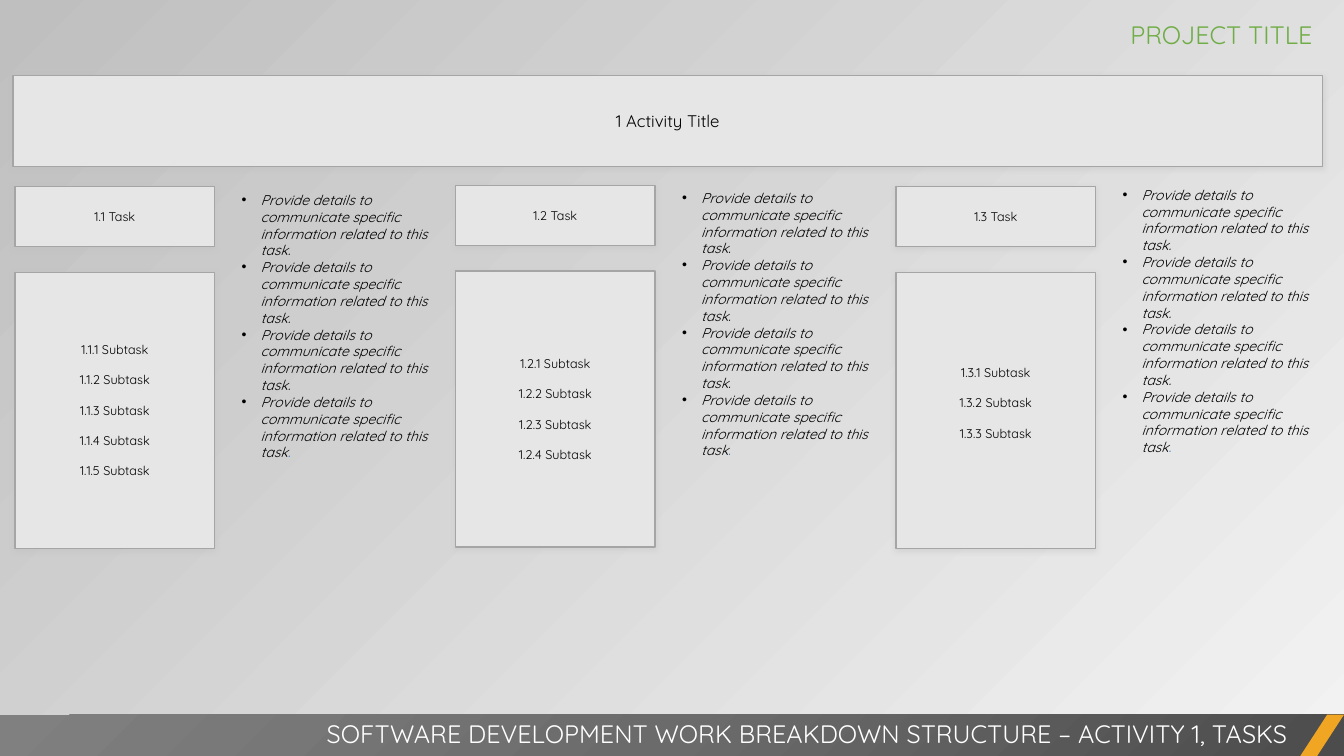
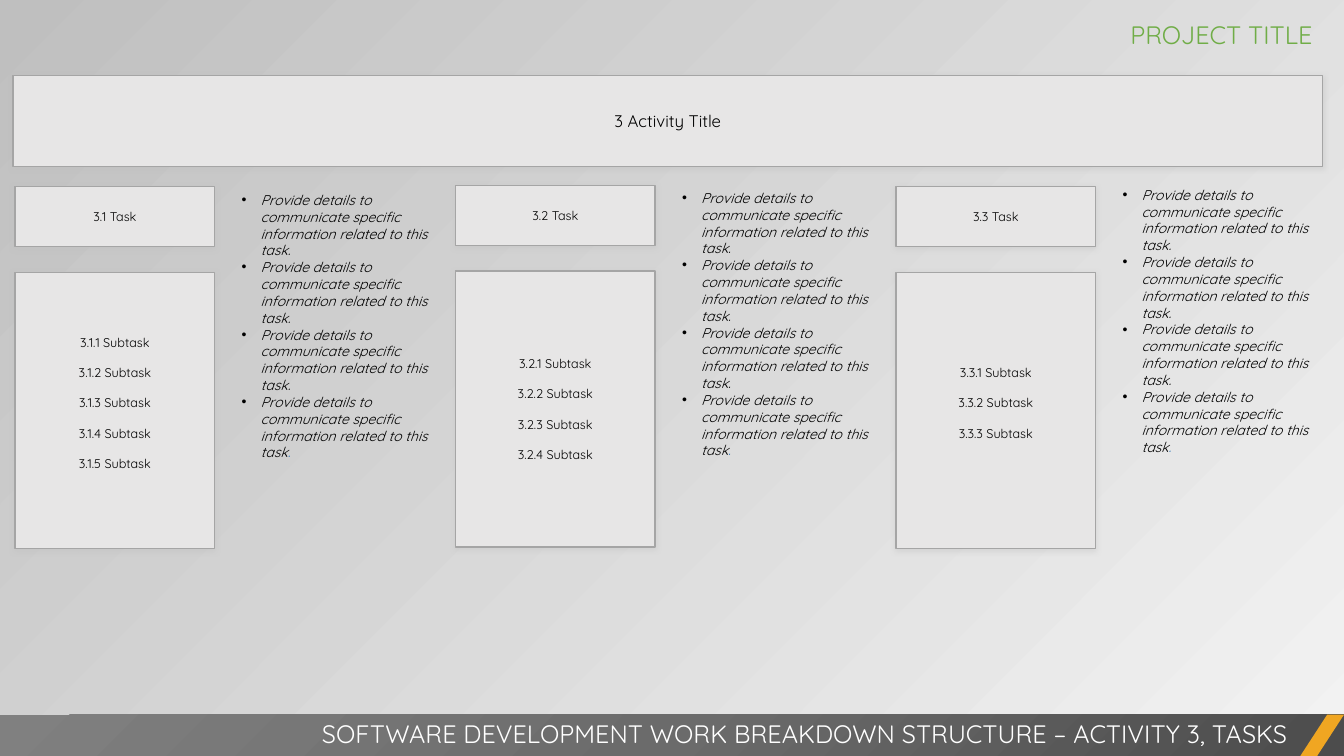
from dataclasses import dataclass

from pptx import Presentation
from pptx import slide as sl
from pptx import util as u
from pptx.dml import color
from pptx.enum import shapes, text
from pptx.oxml import ns, parse_xml
from pptx.shapes import autoshape

FONT = "Quicksand"
COLORS = {
    "panel": "E7E6E6", "outline": "A5A5A5", "shadow": "BFBFBF",
    "ink": "000000", "heading": "70AD47", "full_stop": "2E75B6",
    "footer_text": "FFFFFF", "accent": "F0A622",
    "backdrop_light": "F2F2F2", "backdrop_dark": "BFBFBF",
    "footer_dark": "4C4C4C", "footer_mid": "6B6B6B", "footer_light": "808080",
}
DETAIL = "Provide details to communicate specific information related to this task."

SLIDE_W, SLIDE_H = 33.87, 19.05
FOOTER_TOP, FOOTER_H = 18.01, 1.04
COLUMN_LEFT, COLUMN_STEP = 0.38, 11.1
TASK_W, TASK_H = 5.03, 1.52
SUBTASKS_DROP, SUBTASKS_H = 2.16, 6.96
DETAILS_SHIFT, DETAILS_W, DETAILS_H = 5.46, 5.23, 7.62


@dataclass(frozen=True)
class Box:
    left: float
    top: float
    width: float
    height: float

    def lengths(self) -> tuple[u.Length, ...]:
        return tuple(u.Cm(v) for v in (self.left, self.top, self.width, self.height))


@dataclass(frozen=True)
class TaskColumn:
    top: float
    details_top: float
    subtasks: int


@dataclass(frozen=True)
class Activity:
    number: int
    raised: tuple[int, ...]  # tasks whose subtask list sits above the middle


TASK_COLUMNS = (
    TaskColumn(4.7, 4.7, 5),
    TaskColumn(4.67, 4.65, 4),
    TaskColumn(4.7, 4.57, 3),
)
ACTIVITIES = (Activity(1, (3,)), Activity(3, (1, 3)))


def rgb(name: str) -> color.RGBColor:
    return color.RGBColor.from_string(COLORS[name])


def write(frame, content: str, *, size: float, ink: str = "ink",
          align=text.PP_ALIGN.LEFT, italic: bool = False, gap: float = 0,
          bullet: bool = False, last_ink: str | None = None) -> None:
    """Write one paragraph a line; last_ink colours the final character."""
    frame.word_wrap = True
    lines = content.split("\n")
    for index, line in enumerate(lines):
        paragraph = frame.paragraphs[0] if index == 0 else frame.add_paragraph()
        paragraph.alignment = align
        if index and gap:
            paragraph.space_before = u.Pt(gap)
        if bullet:
            props = paragraph._p.get_or_add_pPr()
            props.set("marL", str(u.Cm(0.48)))
            props.set("indent", str(-u.Cm(0.48)))
            props.append(parse_xml(
                f'<a:buFont {ns.nsdecls("a")} typeface="Arial"/>'))
            props.append(parse_xml(f'<a:buChar {ns.nsdecls("a")} char="•"/>'))
        pieces = [(line, ink)]
        if last_ink and index == len(lines) - 1:
            pieces = [(line[:-1], ink), (line[-1], last_ink)]
        for words, tint in pieces:
            run = paragraph.add_run()
            run.text = words
            run.font.name = FONT
            run.font.size = u.Pt(size)
            run.font.italic = italic
            run.font.color.rgb = rgb(tint)


def add_block(slide: sl.Slide, box: Box, fill: str,
              kind=shapes.MSO_SHAPE.RECTANGLE) -> autoshape.Shape:
    block = slide.shapes.add_shape(kind, *box.lengths())
    block.shadow.inherit = False
    block.fill.solid()
    block.fill.fore_color.rgb = rgb(fill)
    block.line.fill.background()
    return block


def add_panel(slide: sl.Slide, box: Box, content: str, size: float,
              gap: float = 0, bottom: float = 0.13) -> None:
    panel = add_block(slide, box, "panel")
    panel.line.color.rgb = rgb("outline")
    panel.line.width = u.Pt(1)
    effects = panel._element.spPr.find(ns.qn("a:effectLst"))
    effects.append(parse_xml(
        f'<a:outerShdw {ns.nsdecls("a")} blurRad="{u.Pt(4)}" dist="{u.Pt(1)}" '
        f'dir="5400000" algn="t" rotWithShape="0">'
        f'<a:srgbClr val="{COLORS["shadow"]}"><a:alpha val="40000"/></a:srgbClr>'
        f'</a:outerShdw>'))
    panel.text_frame.vertical_anchor = text.MSO_ANCHOR.MIDDLE
    panel.text_frame.margin_bottom = u.Cm(bottom)
    write(panel.text_frame, content, size=size, gap=gap, align=text.PP_ALIGN.CENTER)


def add_text(slide: sl.Slide, box: Box, content: str, **style) -> None:
    frame = slide.shapes.add_textbox(*box.lengths()).text_frame
    frame.auto_size = text.MSO_AUTO_SIZE.SHAPE_TO_FIT_TEXT
    write(frame, content, **style)


def paint_backdrop(slide: sl.Slide) -> None:
    fill = slide.background.fill
    fill.gradient()
    fill.gradient_angle = 135
    for stop, name in zip(fill.gradient_stops, ("backdrop_light", "backdrop_dark")):
        stop.color.rgb = rgb(name)


def add_footer(slide: sl.Slide, title: str) -> None:
    band = add_block(slide, Box(0, FOOTER_TOP, SLIDE_W, FOOTER_H), "footer_mid")
    stops = "".join(
        f'<a:gs pos="{pos}"><a:srgbClr val="{COLORS[name]}"/></a:gs>'
        for pos, name in ((0, "footer_dark"), (50000, "footer_mid"),
                          (100000, "footer_light")))
    props = band._element.spPr
    props.replace(props.find(ns.qn("a:solidFill")), parse_xml(
        f'<a:gradFill {ns.nsdecls("a")} rotWithShape="1"><a:gsLst>{stops}</a:gsLst>'
        f'<a:path path="circle"><a:fillToRect l="100000" t="100000"/></a:path>'
        f'</a:gradFill>'))
    slash = add_block(slide, Box(32.77, FOOTER_TOP, 1.1, FOOTER_H), "accent",
                      shapes.MSO_SHAPE.PARALLELOGRAM)
    slash.adjustments[0] = 0.65
    add_text(slide, Box(6.65, 17.98, 26.05, 1.02), title, size=18,
             ink="footer_text", align=text.PP_ALIGN.RIGHT)


def add_task_column(slide: sl.Slide, activity: Activity, order: int,
                    column: TaskColumn) -> None:
    left = COLUMN_LEFT + (order - 1) * COLUMN_STEP
    task = f"{activity.number}.{order}"
    subtasks = "\n".join(f"{task}.{n} Subtask" for n in range(1, column.subtasks + 1))
    add_panel(slide, Box(left, column.top, TASK_W, TASK_H), f"{task} Task", 9)
    add_panel(slide, Box(left, column.top + SUBTASKS_DROP, TASK_W, SUBTASKS_H),
              subtasks, 9, gap=10.8,
              bottom=0.5 if order in activity.raised else 0.13)
    add_text(slide, Box(left + DETAILS_SHIFT, column.details_top, DETAILS_W, DETAILS_H),
             "\n".join([DETAIL] * 4), size=10, italic=True, bullet=True,
             last_ink="full_stop")


def build_activity(slide: sl.Slide, activity: Activity) -> None:
    paint_backdrop(slide)
    add_panel(slide, Box(0.33, 1.9, 33, 2.29), f"{activity.number} Activity Title", 12)
    add_footer(slide, "SOFTWARE DEVELOPMENT WORK BREAKDOWN STRUCTURE – "
                      f"ACTIVITY {activity.number}, TASKS")
    for order, column in enumerate(TASK_COLUMNS, start=1):
        add_task_column(slide, activity, order, column)
    add_text(slide, Box(0.23, 0.36, 33.1, 1.02), "PROJECT TITLE", size=18,
             ink="heading", align=text.PP_ALIGN.RIGHT)


def main() -> None:
    deck = Presentation()
    deck.slide_width, deck.slide_height = u.Cm(SLIDE_W), u.Cm(SLIDE_H)
    blank = deck.slide_layouts[6]
    for activity in ACTIVITIES:
        build_activity(deck.slides.add_slide(blank), activity)
    deck.save("out.pptx")


if __name__ == "__main__":
    main()
